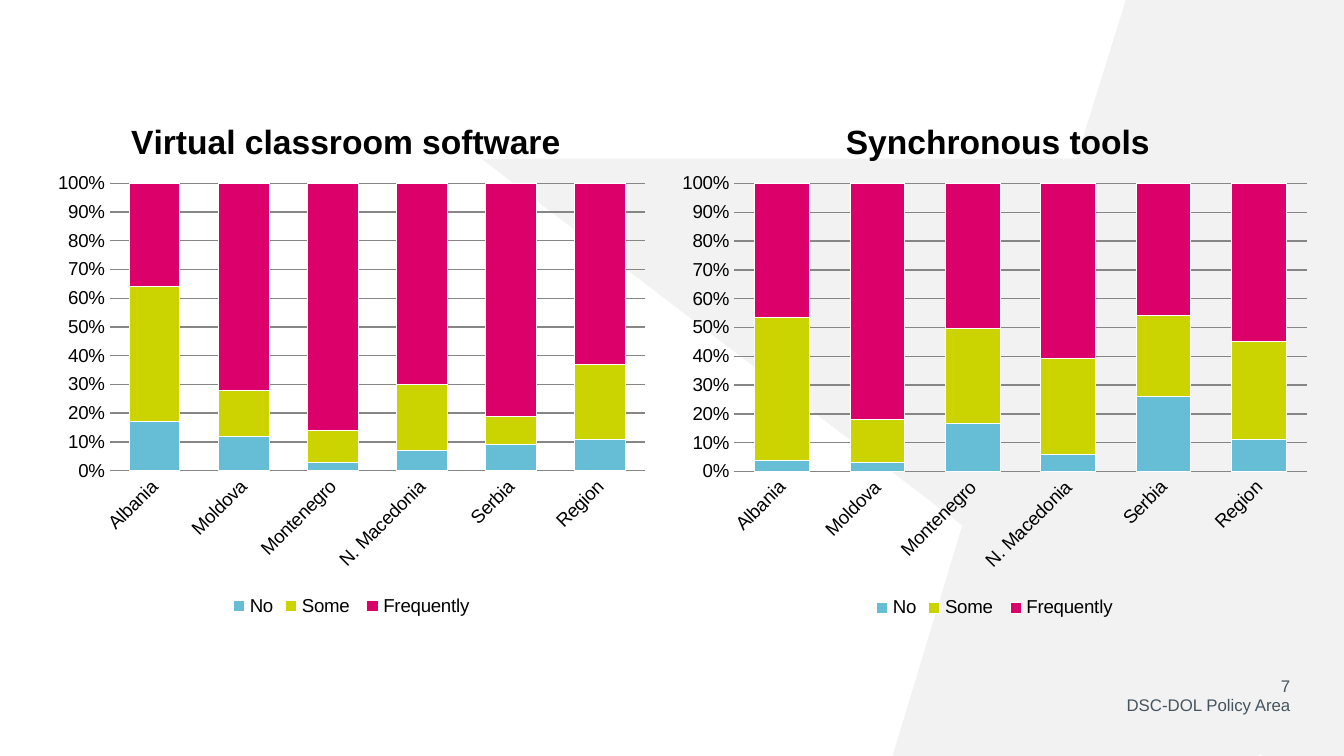
from dataclasses import dataclass

from lxml import etree
from pptx import Presentation, util as u
from pptx.chart.data import CategoryChartData
from pptx.dml.color import RGBColor
from pptx.enum import chart as ch, text as tx
from pptx.oxml import ns


@dataclass(frozen=True)
class Theme:
    font: str = "Arial"
    ink: str = "000000"
    soft: str = "F2F2F2"
    foot: str = "455560"
    grid: str = "868686"
    edge: str = "FFFFFF"
    bars: tuple = ("66BED6", "CBD300", "DC006B")
    head: float = 18
    body: float = 10
    small: float = 9


def rgb(code):
    return RGBColor.from_string(code)


def place(owner, spot, index, inner=False):
    """Give a chart part a manual layout in chart fractions."""
    for old in owner.findall(ns.qn("c:layout")):
        owner.remove(old)
    outer = etree.Element(ns.qn("c:layout"))
    manual = etree.SubElement(outer, ns.qn("c:manualLayout"))
    parts = [("layoutTarget", "inner")] if inner else []
    parts += [("xMode", "edge"), ("yMode", "edge"), *zip("xywh", spot)]
    for tag, val in parts:
        etree.SubElement(manual, ns.qn(f"c:{tag}")).set("val", str(val))
    owner.insert(index, outer)


class Deck:
    def __init__(self, theme, wide):
        self.theme = theme
        self.file = Presentation()
        self.file.slide_width = u.Inches(wide)
        self.file.slide_height = u.Inches(wide * 9 / 16)
        self.slide = self.file.slides.add_slide(self.file.slide_layouts[6])

    def style(self, font, size, color, bold=False):
        font.name = self.theme.font
        font.size = u.Pt(size)
        font.bold = bold
        font.color.rgb = rgb(color)

    def shape(self, points):
        first, *rest = [(u.Inches(x), u.Inches(y)) for x, y in points]
        path = self.slide.shapes.build_freeform(*first)
        path.add_line_segments(rest, close=True)
        shape = path.convert_to_shape()
        shape.shadow.inherit = False
        shape.fill.solid()
        shape.fill.fore_color.rgb = rgb(self.theme.soft)
        shape.line.fill.background()

    def note(self, words, box):
        frame = self.slide.shapes.add_textbox(*map(u.Inches, box)).text_frame
        frame.word_wrap = True
        frame.margin_left = frame.margin_right = 0
        frame.margin_top = frame.margin_bottom = 0
        frame.vertical_anchor = tx.MSO_ANCHOR.MIDDLE
        frame.text = words
        para = frame.paragraphs[0]
        para.alignment = tx.PP_ALIGN.RIGHT
        self.style(para.runs[0].font, self.theme.small, self.theme.foot)

    def chart(self, title, spot, box, plot, cats, rows):
        """Stacked share columns; spot and plot are in chart fractions."""
        data = CategoryChartData(number_format="0")
        data.categories = cats
        for name, vals in rows.items():
            data.add_series(name, vals)
        chart = self.slide.shapes.add_chart(
            ch.XL_CHART_TYPE.COLUMN_STACKED_100, *map(u.Inches, box), data).chart
        theme = self.theme
        self.style(chart.font, theme.body, theme.ink)

        chart.has_title = True
        chart.chart_title.include_in_layout = False
        frame = chart.chart_title.text_frame
        frame.text = title
        self.style(frame.paragraphs[0].runs[0].font, theme.head, theme.ink, True)
        place(chart.chart_title._element, spot, 1)

        chart.has_legend = True
        chart.legend.position = ch.XL_LEGEND_POSITION.BOTTOM
        chart.legend.include_in_layout = False

        bars = chart.plots[0]
        bars.gap_width, bars.overlap = 75, 100
        bars.vary_by_categories = False
        for series, color in zip(bars.series, theme.bars):
            series.format.fill.solid()
            series.format.fill.fore_color.rgb = rgb(color)
            series.format.line.color.rgb = rgb(theme.edge)
        self.axes(chart)
        place(chart._chartSpace.chart.plotArea, plot, 0, inner=True)

    def axes(self, chart):
        cat, val = chart.category_axis, chart.value_axis
        for axis in (cat, val):
            axis.major_tick_mark = axis.minor_tick_mark = ch.XL_TICK_MARK.NONE
        cat.format.line.color.rgb = rgb(self.theme.grid)
        cat.tick_labels.font.size = u.Pt(self.theme.body)
        turn = cat.tick_labels.font._element.getparent().getparent().getparent()
        turn.find(ns.qn("a:bodyPr")).set("rot", "-2700000")
        val.format.line.fill.background()
        val.has_major_gridlines = True
        val.major_gridlines.format.line.color.rgb = rgb(self.theme.grid)
        val.tick_labels.number_format = "0%"
        val.tick_labels.number_format_is_linked = False


CATS = ["Albania", "Moldova", "Montenegro", "N. Macedonia", "Serbia", "Region"]
NAMES = ["No", "Some ", "Frequently"]
CHARTS = [
    ("Virtual classroom software", (0.13, 0.04), (0.34, 0.69, 4.55, 3.94),
     (0.105, 0.171, 0.875, 0.543),
     [(17, 12, 3, 7, 9, 11),
      (47, 16, 11, 23, 10, 26),
      (36, 73, 86, 70, 81, 63)]),
    ("Synchronous tools", (0.262, 0.04), (4.98, 0.69, 4.84, 3.95),
     (0.1, 0.171, 0.88, 0.543),
     [(4, 3, 17, 6, 26, 11),
      (50, 15, 33, 33, 28, 34),
      (47, 82, 51, 60, 46, 55)]),
]


def main():
    deck = Deck(Theme(), 10)
    deck.shape([(8.38, -0.01), (10, -0.01), (10, 5.63), (9.4, 5.63),
                (9.38, 5.61), (9.35, 5.63), (6.64, 5.63), (7.16, 3.91),
                (3.58, 1.18), (8.01, 1.18)])
    deck.note("7", (9.41, 5.03, 0.19, 0.15))
    deck.note("DSC-DOL Policy Area", (6.22, 5.17, 3.38, 0.15))
    for title, spot, box, plot, rows in CHARTS:
        deck.chart(title, spot, box, plot, CATS, dict(zip(NAMES, rows)))
    deck.file.save("out.pptx")


if __name__ == "__main__":
    main()
